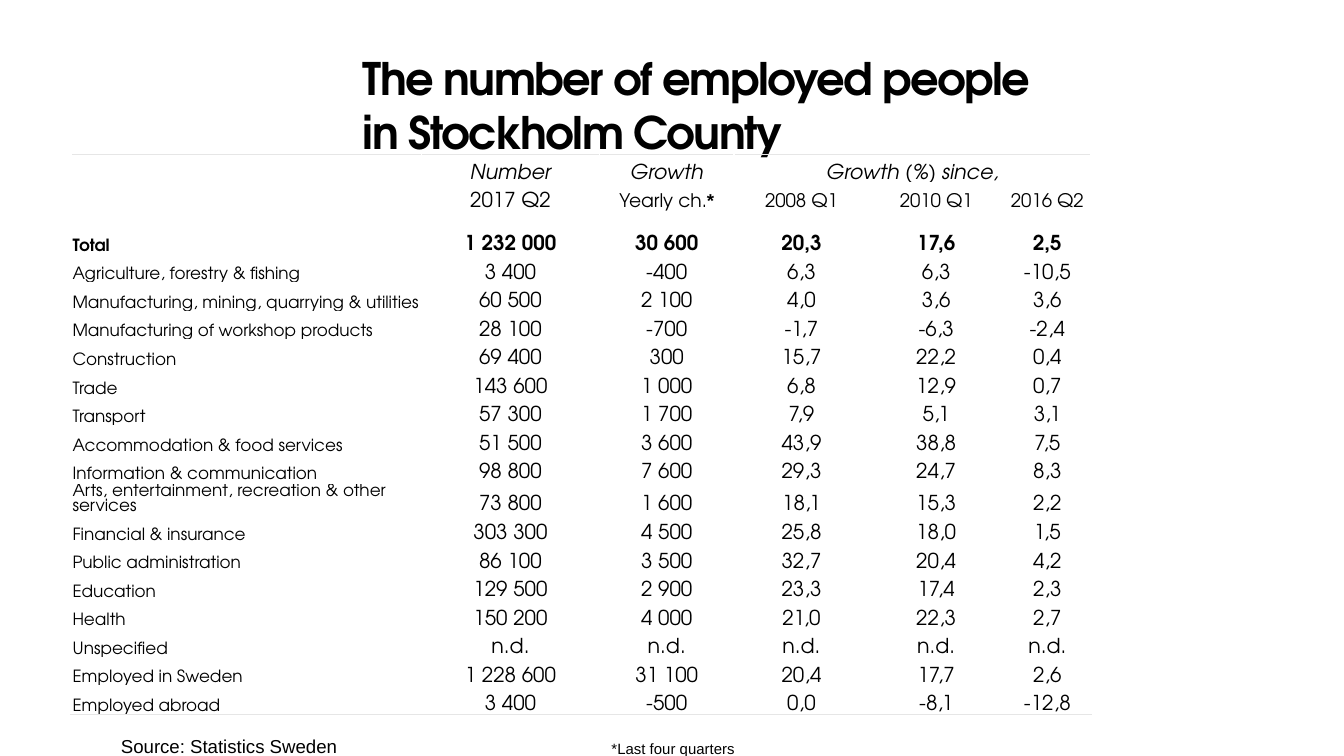
import pptx
import pptx.util
import pptx.dml.color
import pptx.enum.text
import pptx.oxml.ns
from lxml import etree

In, Pt = pptx.util.Inches, pptx.util.Pt
ALIGN = pptx.enum.text.PP_ALIGN
ANCHOR = pptx.enum.text.MSO_ANCHOR
qn = pptx.oxml.ns.qn

# Content
FACE, NOTE_FACE = "TeX Gyre Adventor", "Arial"
INK, RULE = "000000", "E6E6E6"
TITLE = ["The number of employed people", "in Stockholm County"]
NOTES = [("Source: Statistics Sweden", 0.9, 1.7, 10), ("*Last four quarters", 4.55, 1, 8)]
ROWS = [
    ("", "Number", "Growth", "Growth (%) since,", "", ""),
    ("", "2017 Q2", "Yearly ch.*", "2008 Q1", "2010 Q1", "2016 Q2"),
    ("Total", "1 232 000", "30 600", "20,3", "17,6", "2,5"),
    ("Agriculture, forestry & fishing", "3 400", "-400", "6,3", "6,3", "-10,5"),
    ("Manufacturing, mining, quarrying & utilities", "60 500", "2 100", "4,0", "3,6", "3,6"),
    ("Manufacturing of workshop products", "28 100", "-700", "-1,7", "-6,3", "-2,4"),
    ("Construction", "69 400", "300", "15,7", "22,2", "0,4"),
    ("Trade", "143 600", "1 000", "6,8", "12,9", "0,7"),
    ("Transport", "57 300", "1 700", "7,9", "5,1", "3,1"),
    ("Accommodation & food services", "51 500", "3 600", "43,9", "38,8", "7,5"),
    ("Information & communication", "98 800", "7 600", "29,3", "24,7", "8,3"),
    ("Arts, entertainment, recreation & other services", "73 800", "1 600", "18,1", "15,3", "2,2"),
    ("Financial & insurance", "303 300", "4 500", "25,8", "18,0", "1,5"),
    ("Public administration", "86 100", "3 500", "32,7", "20,4", "4,2"),
    ("Education", "129 500", "2 900", "23,3", "17,4", "2,3"),
    ("Health", "150 200", "4 000", "21,0", "22,3", "2,7"),
    ("Unspecified", "n.d.", "n.d.", "n.d.", "n.d.", "n.d."),
    ("Employed in Sweden", "1 228 600", "31 100", "20,4", "17,7", "2,6"),
    ("Employed abroad", "3 400", "-500", "0,0", "-8,1", "-12,8"),
]
HEADER, PERIODS, TOTAL, LAST = 0, 1, 2, len(ROWS) - 1

# Table grid: two taller rows, the others share the remaining height
COLS = [2.6, 1.32, 1, 1, 1, 0.65]
LEFT, TOP, WIDTH, HEIGHT = 0.53, 1.15, 7.59, 4.17
TALL = {TOTAL: 0.32, 11: 0.24}
ROW_H = (HEIGHT - sum(TALL.values())) / (len(ROWS) - len(TALL))


def rgb(value):
    return pptx.dml.color.RGBColor.from_string(value)


def style(p, face, size, bold=False, italic=False):
    f = p.font
    f.name, f.size, f.bold, f.italic = face, Pt(size), bold, italic
    f.color.rgb = rgb(INK)


def no_margins(tf):
    tf.margin_left = tf.margin_right = tf.margin_top = tf.margin_bottom = 0


def border(cell, side):
    ln = etree.Element(qn("a:" + side), w=str(Pt(1)))
    fill = etree.SubElement(ln, qn("a:solidFill"))
    etree.SubElement(fill, qn("a:srgbClr"), val=RULE)
    cell._tc.get_or_add_tcPr().insert(0, ln)


def text_size(row, col):
    if col == 0:
        return 9
    return 10 if row == PERIODS and col > 1 else 11


def fill_cell(cell, text, row, col):
    cell.fill.background()
    cell.vertical_anchor = ANCHOR.BOTTOM
    cell.margin_left = cell.margin_right = cell.margin_top = In(0.01)
    cell.margin_bottom = 0
    p = cell.text_frame.paragraphs[0]
    size = text_size(row, col)
    if col:
        p.alignment = ALIGN.CENTER
    style(p, FACE, size, bold=row == TOTAL, italic=row == HEADER)
    if text.endswith("*"):
        p.add_run().text = text[:-1]
        r = p.add_run()
        r.text, r.font.bold, r.font.name = "*", True, NOTE_FACE
    elif text:
        p.add_run().text = text
    else:
        etree.SubElement(p._p, qn("a:endParaRPr"), sz=str(size * 100))
    if row == HEADER:
        border(cell, "lnT")
    if row == LAST:
        border(cell, "lnB")


prs = pptx.Presentation()
prs.slide_width = In(10)
prs.slide_height = prs.slide_width * 9 // 16
s = prs.slides.add_slide(prs.slide_layouts[5])

# Title
sp = s.shapes.title
sp.left, sp.top, sp.width, sp.height = In(2.7), In(0.38), In(9.2), In(0.8)
tf = sp.text_frame
no_margins(tf)
tf.vertical_anchor = ANCHOR.TOP
tf.auto_size = pptx.enum.text.MSO_AUTO_SIZE.NONE
p = tf.paragraphs[0]
p.alignment = ALIGN.LEFT
style(p, FACE, 24, bold=True)
for i, line in enumerate(TITLE):
    if i:
        p.add_line_break()
    r = p.add_run()
    r.text = line
    r.font._element.set("spc", "-85")

# Table
table = s.shapes.add_table(len(ROWS), len(COLS), In(LEFT), In(TOP),
                           In(WIDTH), In(HEIGHT)).table
table.first_row = table.horz_banding = False
for col, width in enumerate(COLS):
    table.columns[col].width = In(width * WIDTH / sum(COLS))
for row, values in enumerate(ROWS):
    table.rows[row].height = In(TALL.get(row, ROW_H))
    for col, text in enumerate(values):
        fill_cell(table.cell(row, col), text, row, col)
table.cell(HEADER, 3).merge(table.cell(HEADER, 5))

# Source and footnote
for text, left, width, size in NOTES:
    tf = s.shapes.add_textbox(In(left), In(5.3), In(width), In(0.42)).text_frame
    no_margins(tf)
    tf.word_wrap = False
    p = tf.paragraphs[0]
    p.line_spacing = Pt(24)
    style(p, NOTE_FACE, size)
    p.add_run().text = text

prs.save("out.pptx")
